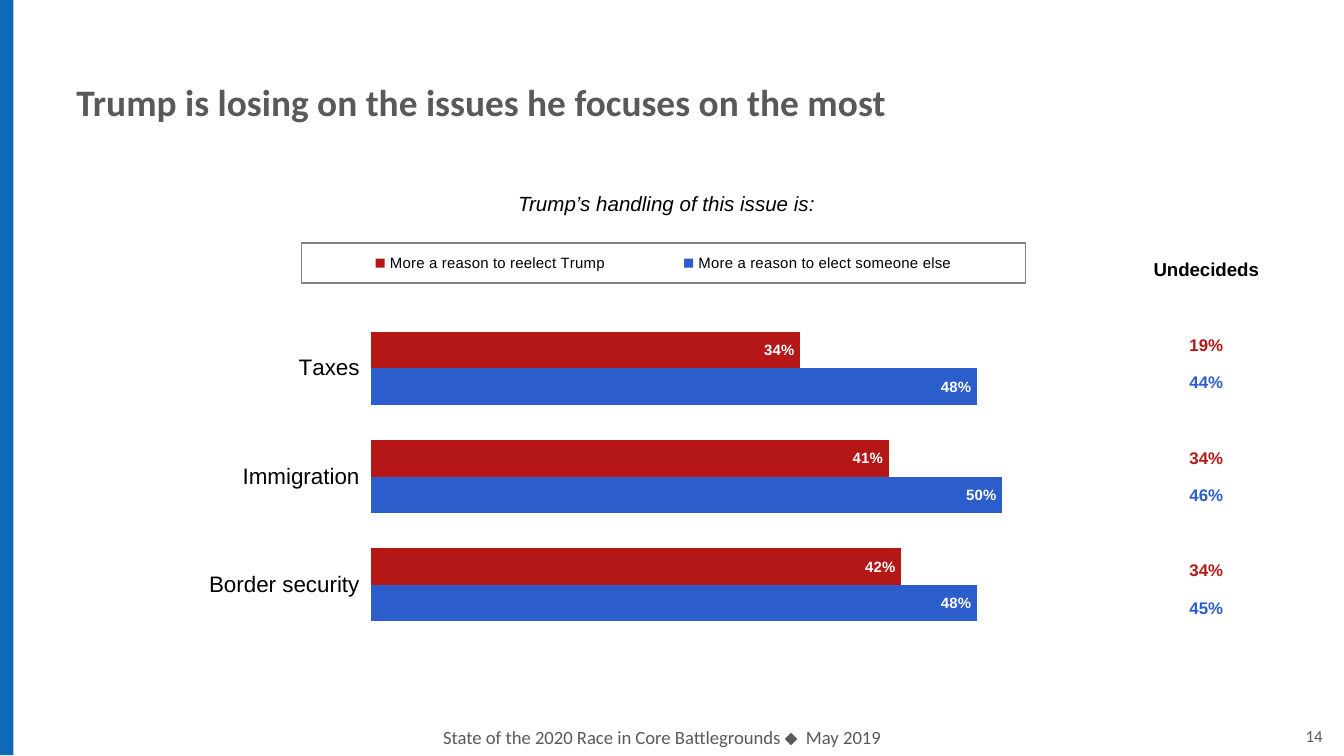
from lxml.etree import SubElement
from pptx import Presentation
from pptx.chart.data import CategoryChartData
from pptx.dml.color import RGBColor
from pptx.enum.chart import XL_CHART_TYPE, XL_LABEL_POSITION, XL_LEGEND_POSITION, XL_TICK_MARK
from pptx.enum.shapes import MSO_SHAPE
from pptx.enum.text import MSO_ANCHOR, PP_ALIGN
from pptx.oxml import parse_xml
from pptx.oxml.ns import nsdecls, qn
from pptx.util import Inches, Pt

COLORS = {
    "bar": "1068B8",
    "gray": "595959",
    "black": "000000",
    "white": "FFFFFF",
    "border": "808080",
    "reelect": "B51717",
    "other": "2B5DCB",
}
CATEGORIES = ["Border security ", "Immigration ", "Taxes "]
SERIES = [
    ("More a reason to elect someone else", [0.48, 0.50, 0.48], "other"),
    ("More a reason to reelect Trump", [0.42, 0.41, 0.34], "reelect"),
]
UNDECIDEDS = [("19%", "44%"), ("34%", "46%"), ("34%", "45%")]


def rgb(name):
    return RGBColor.from_string(COLORS[name])


def style_font(font, size, color, name="Arial", bold=False, italic=False):
    font.size = Pt(size)
    font.name = name
    font.bold = bold
    font.italic = italic
    font.color.rgb = rgb(color)


def add_text(s, box, text, size, color, align, name="Calibri", wrap=True,
             anchor=MSO_ANCHOR.TOP, spacing=None, bold=False, italic=False):
    tf = s.shapes.add_textbox(*map(Inches, box)).text_frame
    tf.word_wrap = wrap
    tf.vertical_anchor = anchor
    p = tf.paragraphs[0]
    p.text = text
    p.alignment = align
    p.line_spacing = spacing
    style_font(p.runs[0].font, size, color, name, bold, italic)


def add_side_bar(s):
    sp = s.shapes.add_shape(MSO_SHAPE.RECTANGLE, 0, Inches(-0.01), Inches(0.1), Inches(5.63))
    sp.shadow.inherit = False
    sp.fill.solid()
    sp.fill.fore_color.rgb = rgb("bar")
    sp.line.fill.background()


def manual_layout(x, y, w, h, inner=False):
    target = '<c:layoutTarget val="inner"/>' if inner else ""
    return parse_xml(
        f'<c:layout {nsdecls("c")}><c:manualLayout>{target}'
        '<c:xMode val="edge"/><c:yMode val="edge"/>'
        f'<c:x val="{x}"/><c:y val="{y}"/><c:w val="{w}"/><c:h val="{h}"/>'
        '</c:manualLayout></c:layout>')


def format_legend(chart):
    chart.has_legend = True
    legend = chart.legend
    legend.position = XL_LEGEND_POSITION.TOP
    legend.include_in_layout = False
    style_font(legend.font, 8, "black")
    element = legend._element
    for old in element.findall(qn("c:layout")):
        element.remove(old)
    element.find(qn("c:legendPos")).addnext(manual_layout(0.12, 0.03, 0.73, 0.09))
    element.find(qn("c:overlay")).addnext(parse_xml(
        f'<c:spPr {nsdecls("c", "a")}><a:ln w="9525"><a:solidFill>'
        f'<a:srgbClr val="{COLORS["border"]}"/></a:solidFill></a:ln></c:spPr>'))


def format_axes(chart):
    axis = chart.category_axis
    axis.major_tick_mark = XL_TICK_MARK.NONE
    axis.format.line.fill.background()
    style_font(axis.tick_labels.font, 12, "black")
    axis = chart.value_axis
    axis.minimum_scale = 0
    axis.maximum_scale = 0.55
    axis.has_major_gridlines = False
    axis.visible = False


def format_series(series, color):
    series.format.fill.solid()
    series.format.fill.fore_color.rgb = rgb(color)
    labels = series.data_labels
    labels.show_value = True
    labels.number_format = "0%"
    labels.number_format_is_linked = False
    labels.position = XL_LABEL_POSITION.INSIDE_END
    style_font(labels.font, 8, "white", bold=True)


def add_issue_chart(s):
    data = CategoryChartData(number_format="0%")
    data.categories = CATEGORIES
    for name, values, _ in SERIES:
        data.add_series(name, values)
    box = map(Inches, (1.36, 1.71, 7.38, 3.31))
    chart = s.shapes.add_chart(XL_CHART_TYPE.BAR_CLUSTERED, *box, data).chart
    chart.has_title = False
    style_font(chart.font, 18, "black")
    plot = chart.plots[0]
    plot.gap_width = 96
    plot.overlap = 0
    plot.vary_by_categories = False
    for series, (_, _, color) in zip(plot.series, SERIES):
        format_series(series, color)
    format_axes(chart)
    format_legend(chart)
    area = chart._chartSpace.chart.plotArea
    for old in area.findall(qn("c:layout")):
        area.remove(old)
    area.insert(0, manual_layout(0.19, 0.19, 0.7, 0.73, inner=True))


def fill_cell(cell, text, size, color, anchor):
    cell.fill.background()
    cell.vertical_anchor = anchor
    p = cell.text_frame.paragraphs[0]
    p.alignment = PP_ALIGN.CENTER
    if text:
        p.text = text
        style_font(p.runs[0].font, size, color, bold=True)
    else:
        SubElement(p._p, qn("a:endParaRPr")).set("sz", str(size * 100))


def add_undecided_table(s):
    rows = []
    for reelect, other in UNDECIDEDS:
        if rows:
            rows.append(("", "black"))
        rows += [(reelect, "reelect"), (other, "other")]
    box = map(Inches, (8.46, 1.61, 1.03, 3.04))
    table = s.shapes.add_table(len(rows) + 1, 1, *box).table
    table.first_row = False
    table.horz_banding = False
    table.rows[0].height = Inches(0.8)
    fill_cell(table.cell(0, 0), "Undecideds", 10, "black", MSO_ANCHOR.MIDDLE)
    for i, (text, color) in enumerate(rows, 1):
        table.rows[i].height = Inches(0.28)
        fill_cell(table.cell(i, 0), text, 9, color, MSO_ANCHOR.BOTTOM)


def main():
    prs = Presentation()
    prs.slide_width = Inches(10)
    prs.slide_height = Inches(10) * 9 // 16
    s = prs.slides.add_slide(prs.slide_layouts[6])
    add_text(s, (1.65, 5.35, 6.55, 0.27), "State of the 2020 Race in Core Battlegrounds ⬥  May 2019",
             10, "gray", PP_ALIGN.CENTER)
    add_side_bar(s)
    add_text(s, (0.47, 0.32, 9.07, 0.94), "Trump is losing on the issues he focuses on the most",
             20, "gray", PP_ALIGN.LEFT, anchor=MSO_ANCHOR.MIDDLE, spacing=0.8, bold=True)
    add_text(s, (9.3, 5.35, 0.64, 0.25), "14", 9, "gray", PP_ALIGN.RIGHT)
    add_issue_chart(s)
    add_text(s, (3.74, 1.37, 2.44, 0.29), "Trump’s handling of this issue is:",
             11, "black", PP_ALIGN.CENTER, name="Arial", wrap=False, italic=True)
    add_undecided_table(s)
    prs.save("out.pptx")


if __name__ == "__main__":
    main()
